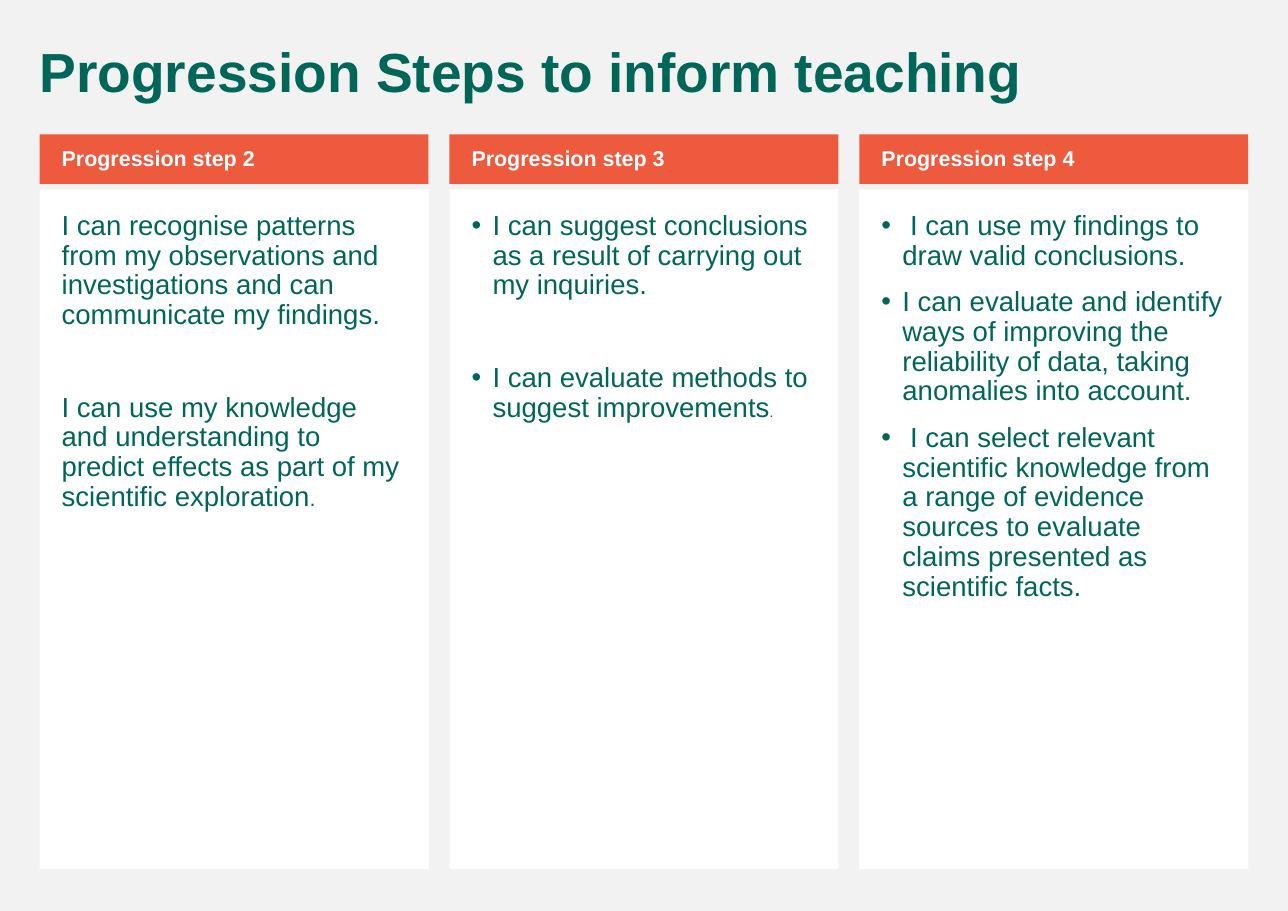
from pptx import Presentation
from pptx.dml.color import RGBColor
from pptx.enum.shapes import MSO_SHAPE
from pptx.enum.text import MSO_ANCHOR, MSO_AUTO_SIZE, PP_ALIGN
from pptx.oxml.ns import qn
from pptx.util import Pt
from lxml import etree

RECT = MSO_SHAPE.RECTANGLE
TOP, MIDDLE = MSO_ANCHOR.TOP, MSO_ANCHOR.MIDDLE
LEFT, NO_FIT = PP_ALIGN.LEFT, MSO_AUTO_SIZE.NONE
PX = 9144  # 100 px to the inch
FONT = "Arial"
COLORS = {"page": "F2F2F2", "panel": "FFFFFF", "header": "ED5A3E",
          "text": "006758", "header_text": "FFFFFF"}
HEADER_H, HEADER_GAP, COLUMN_W, INDENT = 45, 5, 353, 19
SPACE, WIDE_SPACE = 11, 41

# heading, bulleted, space before later items, size of the last full stop, items
COLUMNS = [
    ("Progression step 2", False, WIDE_SPACE, 14, [
        "I can recognise patterns from my observations and investigations "
        "and can communicate my findings.",
        "I can use my knowledge and understanding to predict effects "
        "as part of my scientific exploration."]),
    ("Progression step 3", True, WIDE_SPACE, 9, [
        "I can suggest conclusions as a result of carrying out my inquiries.",
        "I can evaluate methods to suggest improvements."]),
    ("Progression step 4", True, SPACE, 18, [
        " I can use my findings to draw valid conclusions.",
        "I can evaluate and identify ways of improving the reliability of data, "
        "taking anomalies into account.",
        " I can select relevant scientific knowledge from a range of evidence "
        "sources to evaluate claims presented as scientific facts."]),
]


def rgb(name):
    return RGBColor.from_string(COLORS[name])


def place(sp, x, y, w, h):
    sp.left, sp.top, sp.width, sp.height = (v * PX for v in (x, y, w, h))


def paint(sp, color):
    sp.fill.solid()
    sp.fill.fore_color.rgb = rgb(color)
    sp.line.fill.background()


def set_frame(tf, anchor, left, top, right, bottom):
    tf.word_wrap = True
    tf.auto_size = NO_FIT
    tf.vertical_anchor = anchor
    tf.margin_left, tf.margin_top = left * PX, top * PX
    tf.margin_right, tf.margin_bottom = right * PX, bottom * PX


def format_paragraph(p, size, color, bold=False, before=SPACE):
    p.alignment = LEFT
    p.line_spacing = 0.9
    p.space_before, p.space_after = Pt(before), Pt(0)
    for r in p.runs:
        r.font.name, r.font.size, r.font.bold = FONT, Pt(size), bold
        r.font.color.rgb = rgb(color)


def set_bullet(p, bulleted):
    pPr = p._p.get_or_add_pPr()
    indent = INDENT * PX if bulleted else 0
    pPr.set("marL", str(indent))
    pPr.set("indent", str(-indent))
    if bulleted:
        etree.SubElement(pPr, qn("a:buFont"), typeface=FONT)
        etree.SubElement(pPr, qn("a:buChar"), char="•")
    else:
        etree.SubElement(pPr, qn("a:buNone"))


def add_title(sp, x, y, w, h):
    place(sp, x, y, w, h)
    tf = sp.text_frame
    set_frame(tf, TOP, 10, 5, 10, 5)
    tf.text = "Progression Steps to inform teaching"
    format_paragraph(tf.paragraphs[0], 36, "text", bold=True)


def add_header(s, heading, x, y, w, h):
    sp = s.shapes.add_shape(RECT, x * PX, y * PX, w * PX, h * PX)
    sp.shadow.inherit = False
    paint(sp, "header")
    tf = sp.text_frame
    set_frame(tf, MIDDLE, 20, 5, 10, 5)
    tf.text = heading
    format_paragraph(tf.paragraphs[0], 14, "header_text", bold=True)


def add_list(sp, items, bulleted, spacing, stop_size, x, y, w, h):
    place(sp, x, y, w, h)
    paint(sp, "panel")
    tf = sp.text_frame
    set_frame(tf, TOP, 20, 20, 20, 20)
    # The final full stop is a run of its own
    tf.text = "\n".join(items)[:-1]
    tf.paragraphs[-1].add_run().text = "."
    for i, p in enumerate(tf.paragraphs):
        format_paragraph(p, 18, "text", before=spacing if i else SPACE)
        set_bullet(p, bulleted)
    tf.paragraphs[-1].runs[-1].font.size = Pt(stop_size)


def add_columns(s, bodies, x, y, w, h):
    pitch = (w - COLUMN_W) // (len(COLUMNS) - 1)
    body_top = HEADER_H + HEADER_GAP
    for i, (sp, column) in enumerate(zip(bodies, COLUMNS)):
        heading, bulleted, spacing, stop_size, items = column
        left = x + i * pitch
        add_list(sp, items, bulleted, spacing, stop_size,
                 left, y + body_top, COLUMN_W, h - body_top)
        add_header(s, heading, left, y, COLUMN_W, HEADER_H)


def main():
    prs = Presentation()
    prs.slide_width, prs.slide_height = 1169 * PX, 827 * PX
    s = prs.slides.add_slide(prs.slide_layouts[4])
    s.background.fill.solid()
    s.background.fill.fore_color.rgb = rgb("page")

    # Title, three lists and one spare placeholder
    title, *bodies, spare = s.placeholders
    spare._element.getparent().remove(spare._element)
    add_title(title, 26, 36, 1108, 65)
    add_columns(s, bodies, 36, 122, 1098, 667)
    prs.save("out.pptx")


if __name__ == "__main__":
    main()
